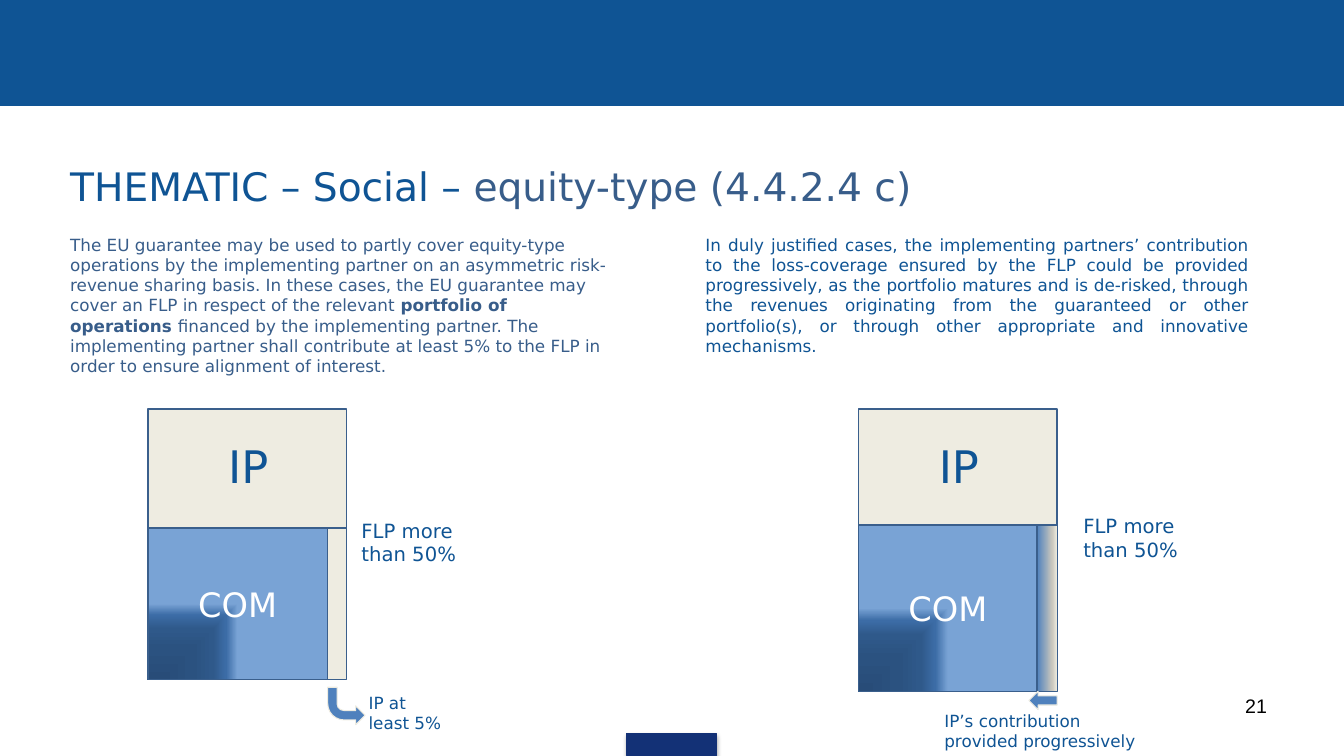
from dataclasses import dataclass, field

from lxml import etree
from pptx import Presentation
from pptx import util as u
from pptx.dml.color import RGBColor
from pptx.enum import shapes, text
from pptx.oxml.ns import qn

COLOURS = {
    "blue": "0F5494", "steel": "385D8A", "outline": "3A5F8C", "arrow": "4F81BD",
    "cream": "EEECE1", "navy": "133176", "white": "FFFFFF", "black": "000000",
}
COVER_STOPS = ((0, "284C78"), (41, "2B5280"), (67, "2F598A"), (85, "3C6CA6"), (100, "79A3D5"))
STRIP_STOPS = ((0, "4F81BD"), (74, "C9C7BD"), (100, "EFEDE0"))
RECTANGLE = shapes.MSO_SHAPE.RECTANGLE
PANEL_TOP = 10.31


@dataclass
class Box:
    left: float
    top: float
    width: float
    height: float

    def lengths(self) -> list:
        return [u.Cm(value) for value in (self.left, self.top, self.width, self.height)]


@dataclass
class Run:
    words: str
    size: int = 12
    colour: str = "blue"
    bold: bool = False
    name: str = "DejaVu Sans"


@dataclass
class Label:
    box: Box
    runs: list[Run]
    frame_format: dict = field(default_factory=dict)
    alignment: text.PP_ALIGN = text.PP_ALIGN.LEFT


@dataclass
class Panel:
    left: float
    partner_height: float
    cover_width: float
    cover_height: float
    strip_width: float
    graded_strip: bool
    loss_label: tuple[float, float]


LABELS = [
    Label(Box(1.52, 3.96, 27.99, 1.45), [
        Run("THEMATIC – Social – ", 28),
        Run("equity-type (4.4.2.4 c)", 28, "steel"),
    ]),
    Label(Box(1.52, 5.79, 14.2, 3.84), [
        Run("The EU guarantee may be used to partly cover equity-type operations by the "
            "implementing partner on an asymmetric risk-revenue sharing basis. In these cases, "
            "the EU guarantee may cover an FLP in respect of the relevant ", colour="steel"),
        Run("portfolio of operations ", colour="steel", bold=True),
        Run("financed by the implementing partner. The implementing partner shall contribute "
            "at least 5% to the FLP in order to ensure alignment of interest.", colour="steel"),
    ]),
    Label(Box(17.53, 5.79, 14.2, 3.33), [
        Run("In duly justified cases, the implementing partners’ contribution to the "
            "loss-coverage ensured by the FLP could be provided progressively, as the portfolio "
            "matures and is de-risked, through the revenues originating from the guaranteed or "
            "other portfolio(s), or through other appropriate and innovative mechanisms."),
    ], alignment=text.PP_ALIGN.JUSTIFY),
    Label(Box(24.28, 17.35, 7.9, 1.32), [Run("21", 14, "black", name="Arial")],
          {"auto_size": text.MSO_AUTO_SIZE.NONE}, text.PP_ALIGN.RIGHT),
    Label(Box(9.04, 17.32, 2.49, 1.27), [Run("IP at least 5%")]),
    Label(Box(23.55, 17.78, 5.49, 1.27), [Run("IP’s contribution provided progressively")]),
]

PANELS = [
    Panel(3.73, 3, 4.52, 3.81, 0.48, False, (8.86, 12.95)),
    Panel(21.64, 2.92, 4.5, 4.19, 0.51, True, (27.05, 12.83)),
]


def apply_format(target, values: dict) -> None:
    for name, value in values.items():
        setattr(target, name, value)


def rgb(colour: str) -> RGBColor:
    return RGBColor.from_string(COLOURS[colour])


def write(shape, label: Label) -> None:
    apply_format(shape.text_frame, {"word_wrap": True, **label.frame_format})
    paragraph = shape.text_frame.paragraphs[0]
    paragraph.alignment = label.alignment
    for item in label.runs:
        run = paragraph.add_run()
        run.text = item.words
        apply_format(run.font, {"name": item.name, "size": u.Pt(item.size), "bold": item.bold})
        run.font.color.rgb = rgb(item.colour)


def add_label(slide, label: Label) -> None:
    shape = slide.shapes.add_textbox(*label.box.lengths())
    shape.text_frame.auto_size = text.MSO_AUTO_SIZE.SHAPE_TO_FIT_TEXT
    write(shape, label)


def add_block(slide, kind, box: Box, fill: str, line: str, width: float = 1):
    shape = slide.shapes.add_shape(kind, *box.lengths())
    shape.shadow.inherit = False
    shape.fill.solid()
    shape.fill.fore_color.rgb = rgb(fill)
    shape.line.color.rgb = rgb(line)
    shape.line.width = u.Pt(width)
    return shape


def add_gradient(shape, stops: tuple, from_corner: bool) -> None:
    gradient = etree.Element(qn("a:gradFill"), rotWithShape="1")
    stop_list = etree.SubElement(gradient, qn("a:gsLst"))
    for position, colour in stops:
        stop = etree.SubElement(stop_list, qn("a:gs"), pos=str(position * 1000))
        etree.SubElement(stop, qn("a:srgbClr"), val=colour)
    if from_corner:
        shade = etree.SubElement(gradient, qn("a:path"), path="rect")
        etree.SubElement(shade, qn("a:fillToRect"), t="100000", r="100000")
    else:
        etree.SubElement(gradient, qn("a:lin"), ang="0", scaled="0")
    properties = shape._element.spPr
    properties.replace(properties.find(qn("a:solidFill")), gradient)


def add_soft_shadow(shape) -> None:
    effects = shape._element.spPr.find(qn("a:effectLst"))
    shadow = etree.SubElement(effects, qn("a:outerShdw"), blurRad=str(u.Pt(3.1)),
                              dist=str(u.Pt(1.8)), dir="5400000", rotWithShape="0")
    colour = etree.SubElement(shadow, qn("a:srgbClr"), val=COLOURS["black"])
    etree.SubElement(colour, qn("a:alpha"), val="35000")


def add_panel(slide, panel: Panel) -> None:
    middle = PANEL_TOP + panel.partner_height
    strip_box = Box(panel.left + panel.cover_width, middle, panel.strip_width, panel.cover_height)
    strip = add_block(slide, RECTANGLE, strip_box, "cream", "outline")
    if panel.graded_strip:
        add_gradient(strip, STRIP_STOPS, False)
        strip.line.width = u.Pt(0.75)
    partner_box = Box(panel.left, PANEL_TOP, 5, panel.partner_height)
    add_block(slide, RECTANGLE, partner_box, "cream", "outline")
    add_label(slide, Label(Box(panel.left + 1.77, 10.92, 1.75, 1.63), [Run("IP", 32)]))
    add_label(slide, Label(Box(*panel.loss_label, 3.18, 1.45), [Run("FLP more than 50%", 14)]))
    cover_box = Box(panel.left, middle, panel.cover_width, panel.cover_height)
    cover = add_block(slide, RECTANGLE, cover_box, "arrow", "outline")
    add_gradient(cover, COVER_STOPS, True)
    write(cover, Label(cover_box, [Run("COM", 24, "white")],
                       {"vertical_anchor": text.MSO_ANCHOR.MIDDLE}, text.PP_ALIGN.CENTER))


def main() -> None:
    presentation = Presentation()
    apply_format(presentation, {"slide_width": u.Cm(33.87), "slide_height": u.Cm(19.05)})
    slide = presentation.slides.add_slide(presentation.slide_layouts[6])
    add_block(slide, RECTANGLE, Box(0, 0, 33.87, 2.67), "blue", "blue", 0.75)
    tab = add_block(slide, RECTANGLE, Box(15.8, 18.49, 2.26, 0.56), "navy", "navy", 0.75)
    add_soft_shadow(tab)
    for panel in PANELS:
        add_panel(slide, panel)
    bent_arrow = add_block(slide, shapes.MSO_SHAPE.BENT_ARROW, Box(8.26, 17.32, 0.94, 0.94),
                           "arrow", "cream", 0.75)
    bent_arrow._element.spPr.find(qn("a:xfrm")).set("flipV", "1")
    left_arrow = add_block(slide, shapes.MSO_SHAPE.RIGHT_ARROW, Box(25.93, 17.42, 0.71, 0.46),
                           "arrow", "cream", 0.75)
    left_arrow.rotation = 180
    for label in LABELS:
        add_label(slide, label)
    presentation.save("out.pptx")


if __name__ == "__main__":
    main()
